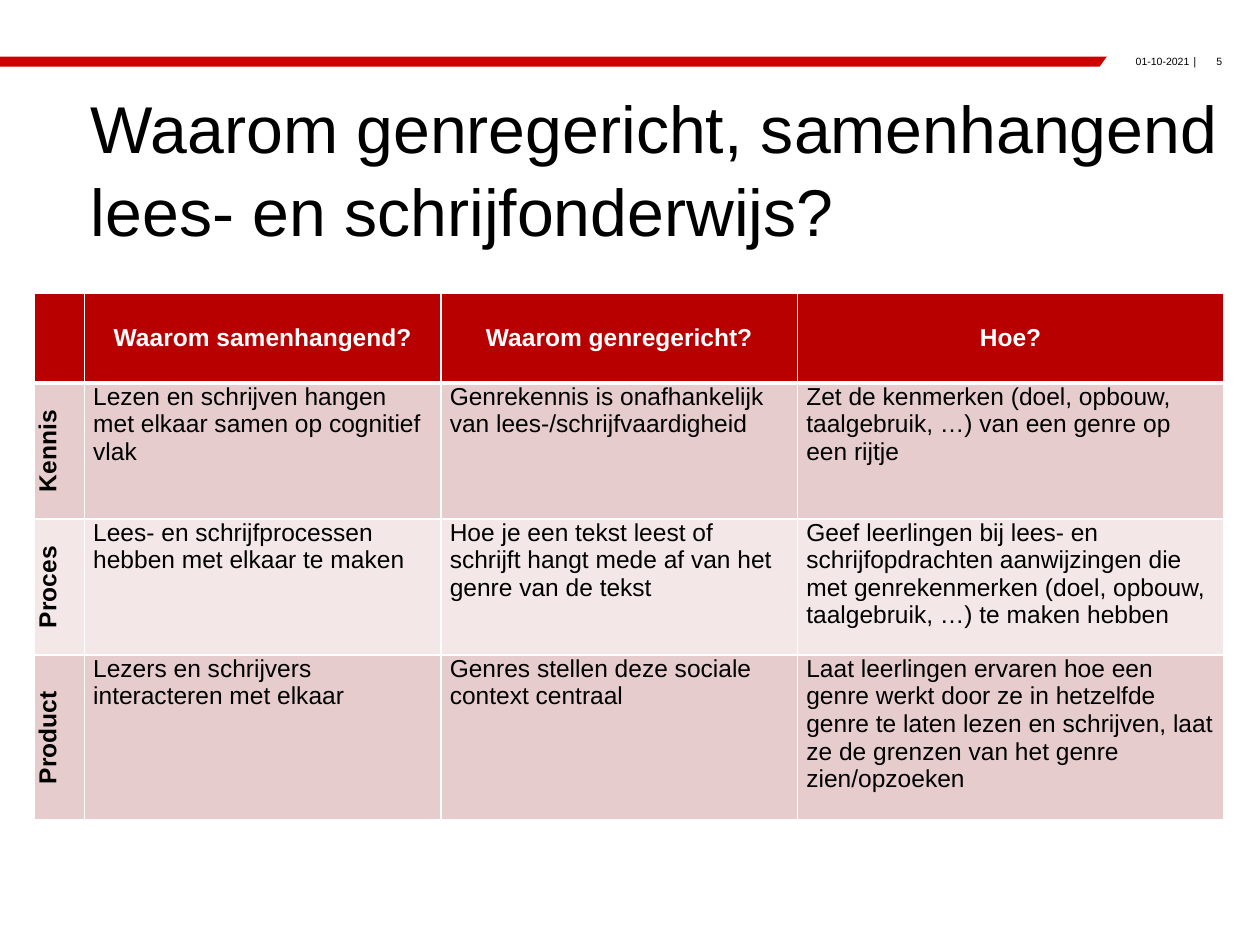
from lxml import etree
from pptx import Presentation
from pptx import util as u
from pptx.dml.color import RGBColor
from pptx.enum import shapes, text
from pptx.oxml import ns

WIDTH, HEIGHT = 10, 7.5
BLACK, WHITE = "000000", "FFFFFF"
BAR_RED, HEADER_RED = "CC0000", "B90000"
BAND_FILLS = ("E6CCCC", "F3E7E7")
COLUMN_WIDTHS = (0.4, 2.83, 2.83, 3.38)
ROW_HEIGHTS = (0.71, 1.08, 1.08, 1.31)
ROWS = (
    ("", "Waarom samenhangend?", "Waarom genregericht?", "Hoe?"),
    ("Kennis", "Lezen en schrijven hangen met elkaar samen op cognitief vlak",
     "Genrekennis is onafhankelijk van lees-/schrijfvaardigheid",
     "Zet de kenmerken (doel, opbouw, taalgebruik, …) van een genre op een rijtje"),
    ("Proces", "Lees- en schrijfprocessen hebben met elkaar te maken",
     "Hoe je een tekst leest of schrijft hangt mede af van het genre van de tekst",
     "Geef leerlingen bij lees- en schrijfopdrachten aanwijzingen die met "
     "genrekenmerken (doel, opbouw, taalgebruik, …) te maken hebben"),
    ("Product", "Lezers en schrijvers interacteren met elkaar",
     "Genres stellen deze sociale context centraal",
     "Laat leerlingen ervaren hoe een genre werkt door ze in hetzelfde genre te laten "
     "lezen en schrijven, laat ze de grenzen van het genre zien/opzoeken"),
)


def color(value):
    """Turn a hex string into a colour."""
    return RGBColor.from_string(value)


def paint(shape, fill):
    """Give a shape a plain fill without line or shadow."""
    shape.fill.solid()
    shape.fill.fore_color.rgb = color(fill)
    shape.line.fill.background()
    shape.shadow.inherit = False


def style(paragraph, size, fill=BLACK, bold=False, font="Arial", align=text.PP_ALIGN.LEFT):
    """Format a paragraph and its runs."""
    paragraph.alignment = align
    for run in paragraph.runs:
        run.font.name = font
        run.font.size = u.Pt(size)
        run.font.bold = bold
        run.font.color.rgb = color(fill)


def add_text(slide, box, wording, size, insets=(0, 0, 0, 0), wrap=True, **look):
    """Place a text box and return its text frame."""
    frame = slide.shapes.add_textbox(*map(u.Inches, box)).text_frame
    frame.word_wrap = wrap
    (frame.margin_left, frame.margin_top,
     frame.margin_right, frame.margin_bottom) = map(u.Inches, insets)
    frame.text = wording
    style(frame.paragraphs[0], size, **look)
    return frame


def add_top_bar(slide, box):
    """Draw the red bar with its slanted end, the date and the page number."""
    left, top, width, height = box
    bar = slide.shapes.add_shape(shapes.MSO_SHAPE.RECTANGLE, *map(u.Inches, box))
    paint(bar, BAR_RED)
    slant, right, upper = left + 0.88 * width, left + width, top - 0.02
    lower = upper + 0.11
    builder = slide.shapes.build_freeform(u.Inches(slant), u.Inches(upper), scale=1.0)
    corners = ((right, upper), (right, lower), (slant - 0.08, lower))
    builder.add_line_segments([tuple(map(u.Inches, corner)) for corner in corners], close=True)
    paint(builder.convert_to_shape(), WHITE)
    right_aligned = text.PP_ALIGN.RIGHT
    label_top = top - 0.01
    add_text(slide, (right - 0.51, label_top, 0.21, 0.15), "5", 6, align=right_aligned)
    add_text(slide, (right - 0.53, label_top, 0.06, 0.15), "|", 6, wrap=False,
             font="DejaVu Sans")
    add_text(slide, (right - 1.39, label_top, 0.83, 0.15), "01-10-2021", 6,
             align=right_aligned)


def add_title(slide, box):
    """Place the title over two lines."""
    frame = add_text(slide, box, "Waarom genregericht, samenhangend lees- en schrijfonderwijs?",
                     37.8, insets=(1.07, 0.05, 0.3, 0.05))
    frame.vertical_anchor = text.MSO_ANCHOR.MIDDLE
    frame.paragraphs[0].line_spacing = 1.04


def add_borders(cell, widths):
    """Give a cell white borders of the given widths, before its fill."""
    properties = cell._tc.get_or_add_tcPr()
    for index, (side, width) in enumerate(widths.items()):
        line = etree.Element(ns.qn(f"a:ln{side}"), w=str(u.Pt(width)))
        fill = etree.SubElement(line, ns.qn("a:solidFill"))
        etree.SubElement(fill, ns.qn("a:srgbClr"), val=WHITE)
        properties.insert(index, line)


def fill_cell(cell, wording, row, column):
    """Write and style one table cell by its row and column."""
    header, label = row == 0, column == 0
    cell.margin_left = cell.margin_right = u.Inches(0.07)
    cell.margin_top = cell.margin_bottom = 0
    cell.vertical_anchor = text.MSO_ANCHOR.MIDDLE if header else text.MSO_ANCHOR.TOP
    cell.fill.solid()
    cell.fill.fore_color.rgb = color(HEADER_RED if header else BAND_FILLS[(row - 1) % 2])
    cell.text = wording
    align = text.PP_ALIGN.CENTER if header or label else text.PP_ALIGN.LEFT
    style(cell.text_frame.paragraphs[0], 14, WHITE if header else BLACK,
          bold=header or label, align=align)
    if label and not header:
        cell._tc.get_or_add_tcPr().set("vert", "vert270")
    add_borders(cell, {"L": 1, "R": 1, "T": 3 if row == 1 else 1, "B": 3 if header else 1})


def add_reason_table(slide, box):
    """Build the table of reasons and methods."""
    frame = slide.shapes.add_table(len(ROWS), len(COLUMN_WIDTHS), *map(u.Inches, box))
    table = frame.table
    for column, width in zip(table.columns, COLUMN_WIDTHS):
        column.width = u.Inches(width)
    for row, height in zip(table.rows, ROW_HEIGHTS):
        row.height = u.Inches(height)
    for row, wordings in enumerate(ROWS):
        for column, wording in enumerate(wordings):
            fill_cell(table.cell(row, column), wording, row, column)


def main():
    """Build and save the presentation."""
    presentation = Presentation()
    presentation.slide_width = u.Inches(WIDTH)
    presentation.slide_height = u.Inches(HEIGHT)
    slide = presentation.slides.add_slide(presentation.slide_layouts[6])
    add_top_bar(slide, (0, 0.06 * HEIGHT, WIDTH, 0.08))
    add_title(slide, (-0.35, 0.89, 10.98, 0.87))
    add_reason_table(slide, (0.27, 2.33, sum(COLUMN_WIDTHS), sum(ROW_HEIGHTS)))
    presentation.save("out.pptx")


if __name__ == "__main__":
    main()
